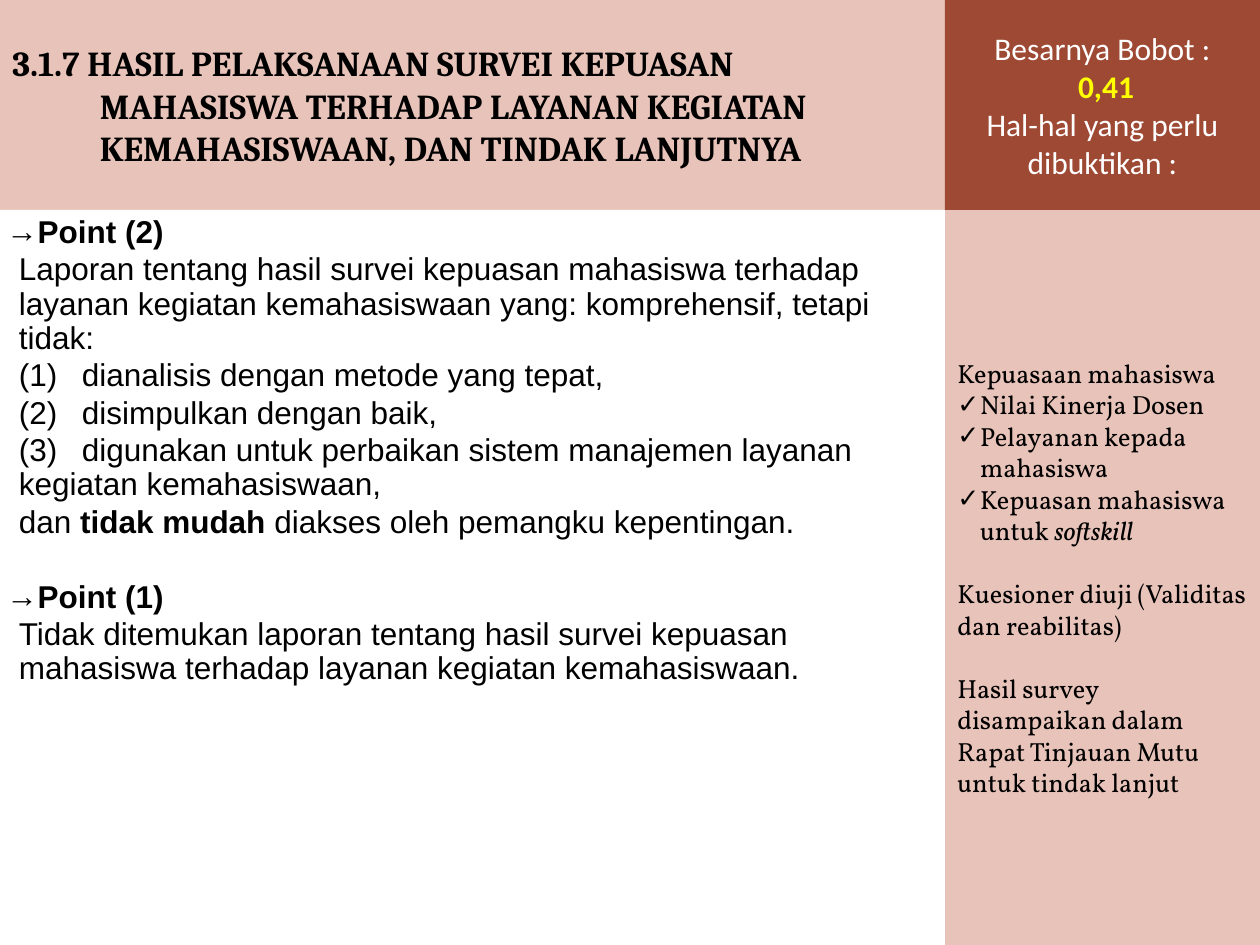
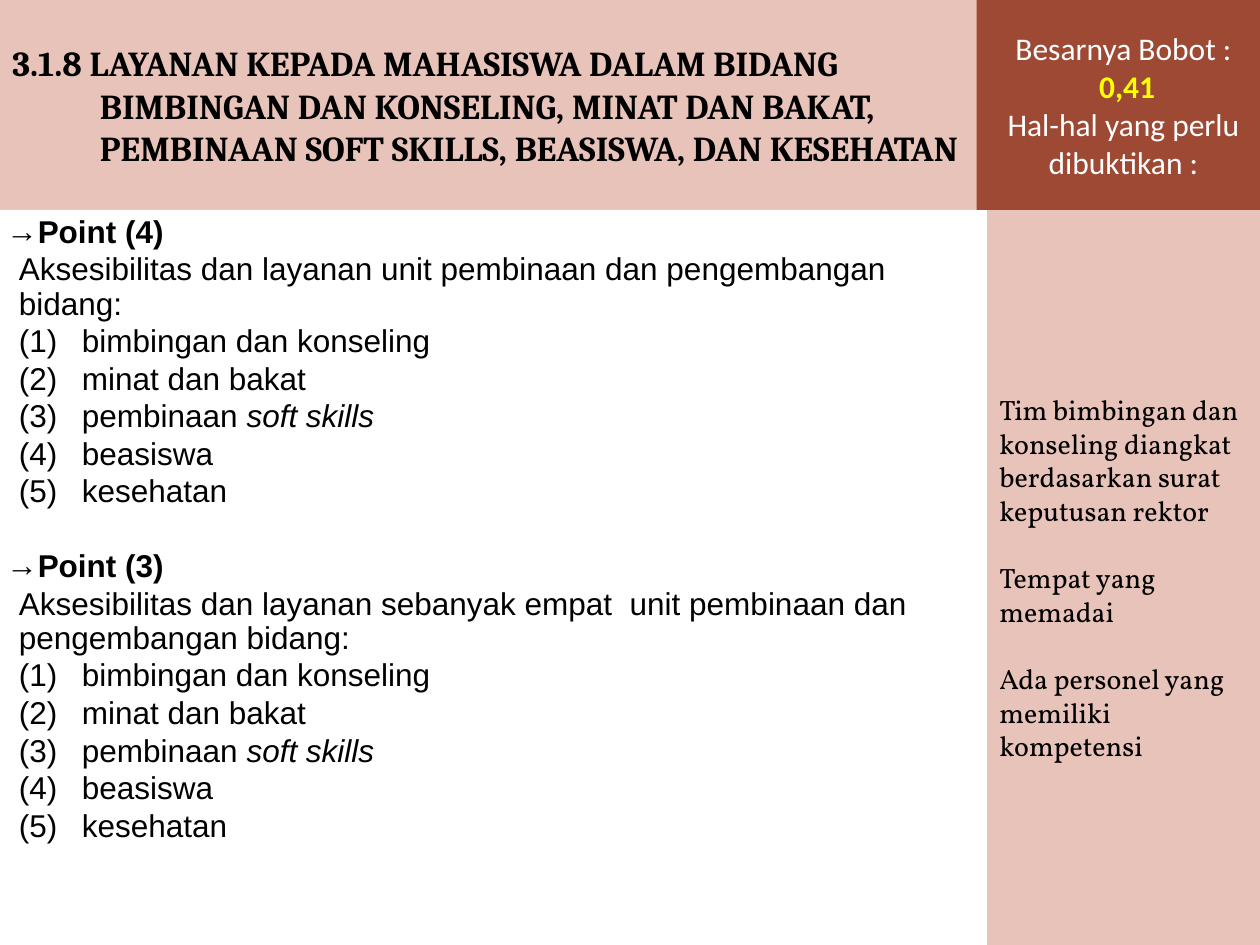
from lxml import etree
from pptx import Presentation
from pptx.dml.color import RGBColor
from pptx.enum.shapes import MSO_SHAPE
from pptx.enum.text import MSO_ANCHOR, PP_ALIGN
from pptx.oxml.ns import qn
from pptx.util import Pt

RECT = MSO_SHAPE.RECTANGLE
TOP, MIDDLE = MSO_ANCHOR.TOP, MSO_ANCHOR.MIDDLE
LEFT, CENTER = PP_ALIGN.LEFT, PP_ALIGN.CENTER

THEME = {
    "rose": "E8C3B9", "rust": "9E4934", "white": "FFFFFF",
    "black": "000000", "yellow": "FFFF00",
    "title": {"name": "Cambria", "size": Pt(20), "bold": True},
    "body": {"name": "Arial", "size": Pt(18)},
    "weight": {"name": "Calibri", "size": Pt(18)},
    "evidence": {"name": "Vollkorn"},
}
W, H, BAND_H = 720, 540, 120
BOLD, ITALIC = {"bold": True}, {"italic": True}
BODY = {"margin": 7.2, "indent": -7.2, "line": 0.9, "after": 2}
HEAD = BODY | {"bullet": "→"}
ITEM = BODY | {"indent": 0, "tab": 37.2}
CHECK = {"margin": 13, "indent": -13, "bullet": "✓"}
BODY_GAP = 21.4

SERVICES = [
    ([("(1)\tbimbingan dan konseling", {})], ITEM),
    ([("(2)\tminat dan bakat", {})], ITEM),
    ([("(3)\tpembinaan ", {}), ("soft skills", ITALIC)], ITEM),
    ([("(4)\tbeasiswa", {})], ITEM),
    ([("(5)\tkesehatan", {})], ITEM),
]
WEIGHT = [
    ([("Besarnya Bobot :", {})], {}),
    ([(" ", {}), ("0,41", BOLD | {"color": "yellow"})], {}),
    ([("Hal-hal yang perlu dibuktikan :", {})], {}),
]
SLIDES = [
    {
        "split": 540, "weight_x": 540, "weight_w": 180, "evidence_size": 15,
        "title": "3.1.7 HASIL PELAKSANAAN SURVEI KEPUASAN MAHASISWA TERHADAP "
                 "LAYANAN KEGIATAN KEMAHASISWAAN, DAN TINDAK LANJUTNYA",
        "body": [
            ([("Point (2)", BOLD)], HEAD),
            ([("Laporan tentang hasil survei kepuasan mahasiswa terhadap layanan "
               "kegiatan kemahasiswaan yang: komprehensif, tetapi tidak:", {})],
             BODY | {"indent": 0}),
            ([("(1)\tdianalisis dengan metode yang tepat,", {})], ITEM),
            ([("(2)\tdisimpulkan dengan baik,", {})], ITEM),
            ([("(3)\tdigunakan untuk perbaikan sistem manajemen layanan "
               "kegiatan kemahasiswaan,", {})], ITEM),
            ([("dan ", {}), ("tidak mudah", BOLD),
              (" diakses oleh pemangku kepentingan.", {})], BODY | {"indent": 0}),
            ([("Point (1)", BOLD)], HEAD | {"before": BODY_GAP}),
            ([("Tidak ditemukan laporan tentang hasil survei kepuasan mahasiswa "
               "terhadap layanan kegiatan kemahasiswaan.", {})],
             BODY | {"indent": 0}),
        ],
        "evidence": [
            ([("Kepuasaan mahasiswa", {})], {}),
            ([("Nilai Kinerja Dosen", {})], CHECK),
            ([("Pelayanan kepada mahasiswa", {})], CHECK),
            ([("Kepuasan mahasiswa untuk ", {}), ("softskill", ITALIC)], CHECK),
            ([("Kuesioner diuji (Validitas dan reabilitas)", {})], {"before": 18}),
            ([("Hasil survey disampaikan dalam Rapat Tinjauan Mutu untuk tindak "
               "lanjut", {})], {"before": 18}),
        ],
    },
    {
        "split": 564, "weight_x": 558, "weight_w": 168, "evidence_size": 16,
        "title": "3.1.8 LAYANAN KEPADA MAHASISWA DALAM BIDANG BIMBINGAN DAN "
                 "KONSELING, MINAT DAN BAKAT, PEMBINAAN SOFT SKILLS, BEASISWA, "
                 "DAN KESEHATAN",
        "body": [
            ([("Point (4)", BOLD)], HEAD),
            ([("Aksesibilitas dan layanan unit pembinaan dan pengembangan "
               "bidang:", {})], BODY | {"indent": 0}),
            *SERVICES,
            ([("Point (3)", BOLD)], HEAD | {"before": BODY_GAP}),
            ([("Aksesibilitas dan layanan sebanyak empat  unit pembinaan dan "
               "pengembangan bidang:", {})], BODY | {"indent": 0}),
            *SERVICES,
        ],
        "evidence": [
            ([("Tim bimbingan dan konseling diangkat berdasarkan surat keputusan "
               "rektor", {})], {}),
            ([("Tempat yang memadai", {})], {"before": 19.2}),
            ([("Ada personel yang memiliki kompetensi", {})], {"before": 19.2}),
        ],
    },
]


def format_paragraph(p, fmt):
    for key, attr in (("before", "space_before"), ("after", "space_after")):
        setattr(p, attr, Pt(fmt.get(key, 0)))
    p.line_spacing = fmt.get("line", 1.0)
    pPr = p._p.get_or_add_pPr()
    pPr.set("marL", str(Pt(fmt.get("margin", 0))))
    pPr.set("indent", str(Pt(fmt.get("indent", 0))))
    if "bullet" in fmt:
        etree.SubElement(pPr, qn("a:buFont")).set("typeface", "Arial")
        etree.SubElement(pPr, qn("a:buChar")).set("char", fmt["bullet"])
    else:
        etree.SubElement(pPr, qn("a:buNone"))
    if "tab" in fmt:
        tabs = etree.SubElement(pPr, qn("a:tabLst"))
        tab = etree.SubElement(tabs, qn("a:tab"))
        tab.set("pos", str(Pt(fmt["tab"])))
        tab.set("algn", "l")


def add_panel(s, box, fill, paragraphs, font, color="black", anchor=MIDDLE,
              align=LEFT, inset=(7.2, 3.6)):
    sp = s.shapes.add_shape(RECT, *(Pt(v) for v in box))
    sp.shadow.inherit = False
    sp.fill.solid()
    sp.fill.fore_color.rgb = RGBColor.from_string(THEME[fill])
    sp.line.fill.background()
    tf = sp.text_frame
    tf.word_wrap = True
    tf.vertical_anchor = anchor
    tf.margin_left = tf.margin_right = Pt(inset[0])
    tf.margin_top = tf.margin_bottom = Pt(inset[1])
    for i, (runs, fmt) in enumerate(paragraphs):
        p = tf.add_paragraph() if i else tf.paragraphs[0]
        p.alignment = align
        format_paragraph(p, fmt)
        for text, extra in runs:
            r = p.add_run()
            r.text = text
            values = {"color": color} | font | extra
            r.font.color.rgb = RGBColor.from_string(THEME[values.pop("color")])
            for attr, value in values.items():
                setattr(r.font, attr, value)


prs = Presentation()
prs.slide_width, prs.slide_height = Pt(W), Pt(H)

for page in SLIDES:
    s = prs.slides.add_slide(prs.slide_layouts[6])
    split = page["split"]
    title = [([(page["title"], {})], {"margin": 50, "indent": -50})]
    evidence_font = THEME["evidence"] | {"size": Pt(page["evidence_size"])}
    add_panel(s, (0, 0, split, BAND_H), "rose", title, THEME["title"])
    add_panel(s, (split, BAND_H, W - split, H - BAND_H), "rose",
              page["evidence"], evidence_font)
    add_panel(s, (0, BAND_H, split, H - BAND_H), "white", page["body"],
              THEME["body"], anchor=TOP, inset=(3.6, 3.6))
    add_panel(s, (page["weight_x"], 0, page["weight_w"], BAND_H), "rust", WEIGHT,
              THEME["weight"], color="white", align=CENTER)

prs.save("out.pptx")
